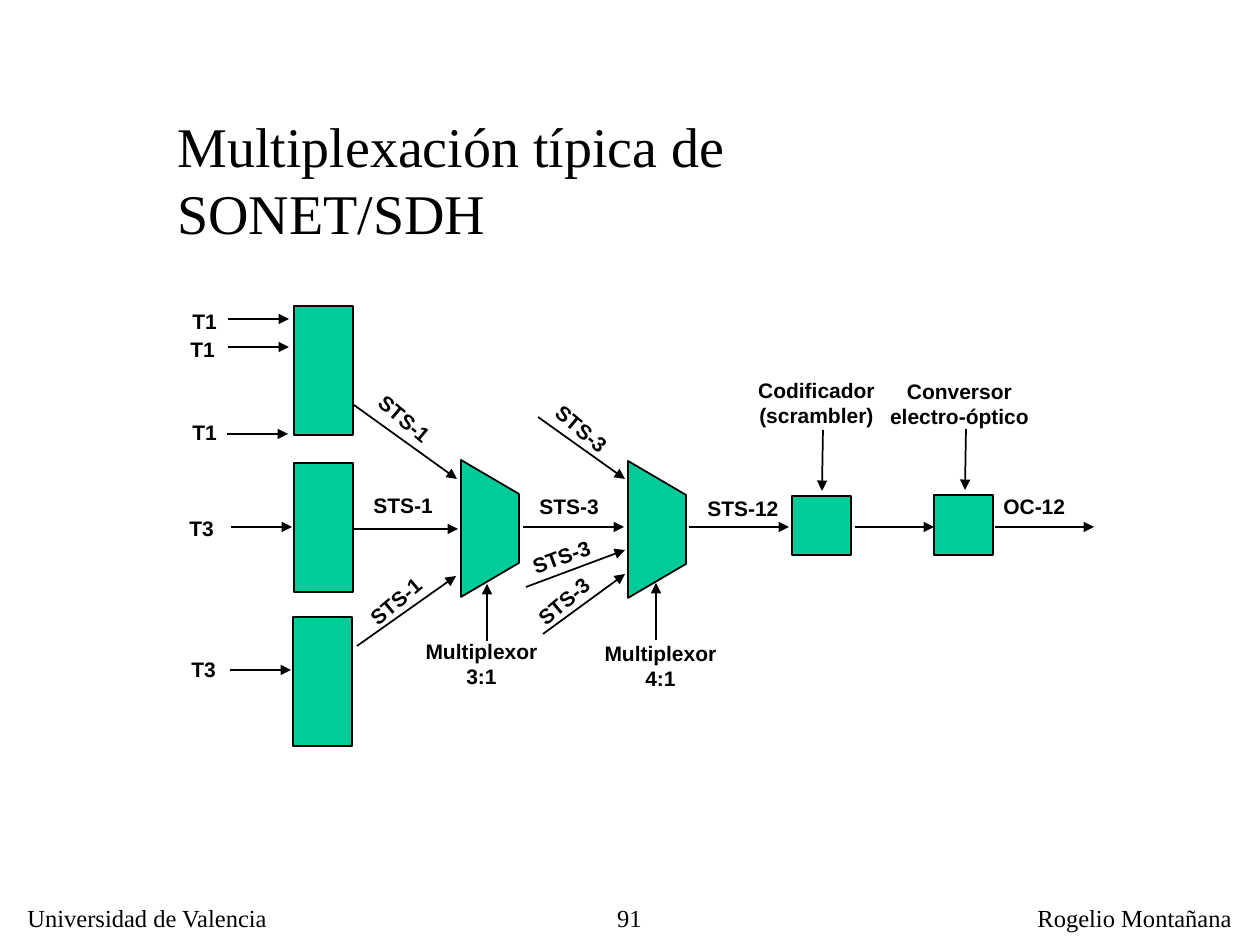
"""Build the slide on typical SONET/SDH multiplexing."""
from pptx import Presentation
from pptx import util as u
from pptx.dml.color import RGBColor
from pptx.enum import shapes, text
from pptx.oxml.ns import qn
from lxml import etree

SCALE = 914400 / 126
GREEN, BLACK = "00CC99", "000000"
SERIF, SANS = "Times New Roman", "Arial"
LEFT, CENTER, RIGHT = text.PP_ALIGN.LEFT, text.PP_ALIGN.CENTER, text.PP_ALIGN.RIGHT

# words, left, top, width, height, size, alignment, wrap
SERIF_TEXTS = [
    ("Multiplexación típica de SONET/SDH", 165, 105, 850, 146, 32, LEFT, True),
    ("Universidad de Valencia", 15, 897, 268, 41, 14, LEFT, False),
    ("91", 520, 897, 134, 41, 14, RIGHT, True),
    ("Rogelio Montañana", 1025, 897, 222, 41, 14, LEFT, False),
]
# words, left, top, width
CAPTIONS = [
    ("Codificador (scrambler)", 722, 371, 189),
    ("Conversor electro-óptico", 865, 372, 189),
    ("Multiplexor 3:1", 408, 632, 147),
    ("Multiplexor 4:1", 587, 634, 147),
]
# words, left, top, width, rotation
SIGNALS = [
    ("T1", 180, 302, 50, 0), ("T1", 178, 330, 50, 0), ("T1", 180, 413, 50, 0),
    ("T3", 177, 509, 50, 0), ("T3", 179, 650, 50, 0),
    ("STS-1", 362, 401, 88, 40), ("STS-1", 361, 486, 88, 0), ("STS-1", 353, 581, 88, -40),
    ("STS-3", 539, 411, 88, 40), ("STS-3", 527, 487, 88, 0),
    ("STS-3", 519, 537, 88, -20), ("STS-3", 521, 581, 88, -40),
    ("STS-12", 695, 489, 99, 0), ("OC-12", 991, 487, 90, 0),
]
# left, top, width, height
BLOCKS = [
    (294, 306, 59, 129), (294, 463, 59, 129), (293, 617, 59, 129),
    (792, 496, 59, 59), (934, 495, 59, 60),
]
MULTIPLEXERS = [(461, 460), (628, 461)]
MUX_WIDTH, MUX_HEIGHT, MUX_SLANT = 58, 137, 34
# start x, start y, end x, end y
ARROWS = [
    (228, 319, 289, 319), (228, 347, 289, 347), (227, 434, 288, 434),
    (231, 527, 292, 527), (230, 670, 291, 670),
    (354, 405, 457, 479), (354, 529, 458, 529), (357, 646, 456, 576),
    (538, 417, 625, 479), (523, 527, 624, 527),
    (526, 587, 625, 550), (543, 634, 625, 574),
    (689, 527, 789, 527), (855, 527, 934, 527), (995, 527, 1094, 527),
    (823, 430, 822, 491), (966, 429, 965, 490),
    (487, 641, 487, 584), (656, 640, 656, 583),
]


def px(*lengths):
    return [round(length * SCALE) for length in lengths]


def color(code):
    return RGBColor.from_string(code)


def add_text(page, words, area, size, font, align=LEFT, wrap=False, bold=False, turn=0):
    box = page.shapes.add_textbox(*px(*area))
    box.rotation = turn
    frame = box.text_frame
    frame.text = words
    frame.word_wrap = wrap
    frame.auto_size = text.MSO_AUTO_SIZE.SHAPE_TO_FIT_TEXT
    frame.vertical_anchor = text.MSO_ANCHOR.TOP
    para = frame.paragraphs[0]
    para.alignment = align
    span = para.runs[0]
    span.font.size = u.Pt(size)
    span.font.name = font
    span.font.bold = bold
    span.font.color.rgb = color(BLACK)


def paint(shape):
    shape.shadow.inherit = False
    shape.fill.solid()
    shape.fill.fore_color.rgb = color(GREEN)
    shape.line.color.rgb = color(BLACK)
    shape.line.width = u.Pt(1)


def add_multiplexer(page, left, top):
    right, bottom = left + MUX_WIDTH, top + MUX_HEIGHT
    builder = page.shapes.build_freeform(left, top, scale=SCALE)
    builder.add_line_segments(
        [(right, top + MUX_SLANT), (right, bottom - MUX_SLANT), (left, bottom)], close=True)
    paint(builder.convert_to_shape())


def add_arrow(page, ends):
    arrow = page.shapes.add_connector(shapes.MSO_CONNECTOR.STRAIGHT, *px(*ends))
    arrow.line.color.rgb = color(BLACK)
    arrow.line.width = u.Pt(1)
    properties = arrow.element.spPr
    etree.SubElement(properties.find(qn("a:ln")), qn("a:tailEnd"), type="triangle")
    etree.SubElement(properties, qn("a:effectLst"))


def main():
    deck = Presentation()
    deck.slide_width, deck.slide_height = px(1260, 945)
    page = deck.slides.add_slide(deck.slide_layouts[6])
    for words, *area, size, align, wrap in SERIF_TEXTS:
        add_text(page, words, area, size, SERIF, align, wrap)
    for block in BLOCKS:
        paint(page.shapes.add_shape(shapes.MSO_SHAPE.RECTANGLE, *px(*block)))
    for corner in MULTIPLEXERS:
        add_multiplexer(page, *corner)
    for ends in ARROWS:
        add_arrow(page, ends)
    for words, left, top, width in CAPTIONS:
        add_text(page, words, (left, top, width, 63), 12, SANS, CENTER, wrap=True, bold=True)
    for words, left, top, width, turn in SIGNALS:
        add_text(page, words, (left, top, width, 38), 12, SANS, bold=True, turn=turn)
    deck.save("out.pptx")


if __name__ == "__main__":
    main()
